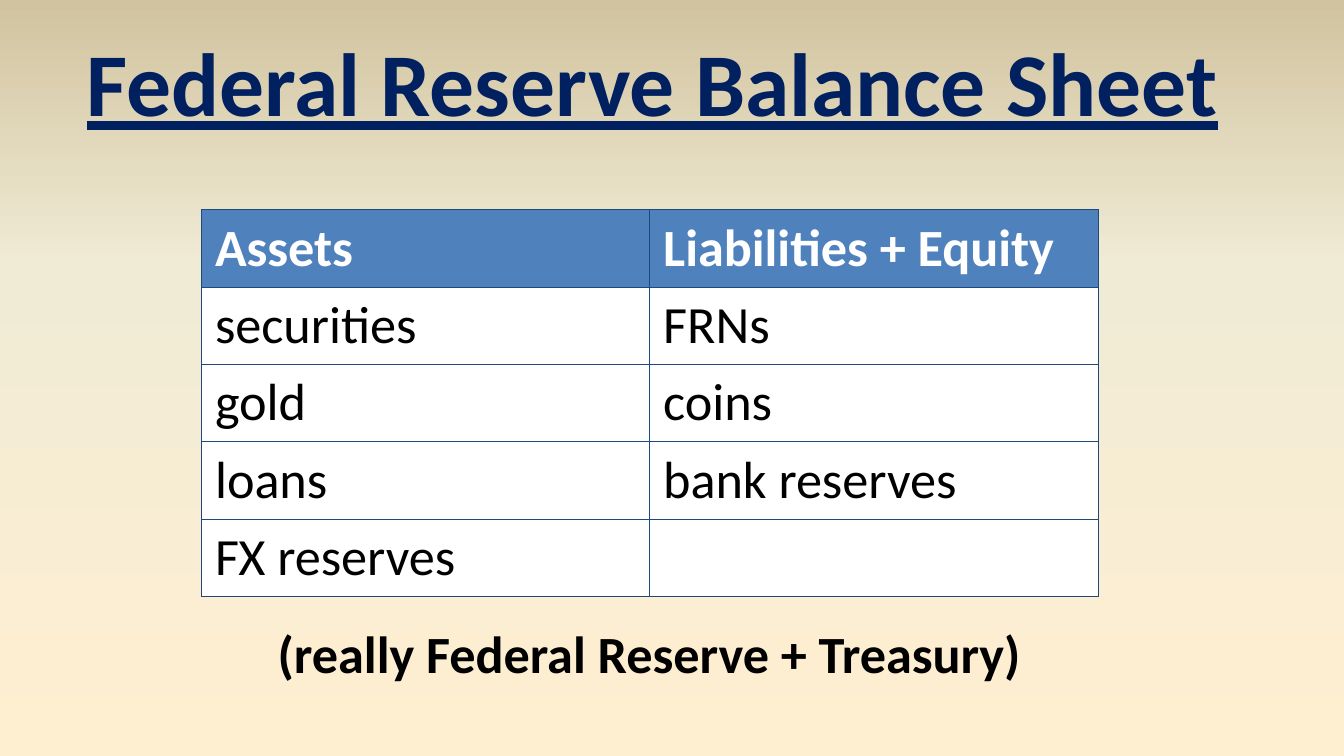
from pptx import Presentation
from pptx import util as u
from pptx.dml import color
from pptx.enum import text
from pptx.oxml import parse_xml
from pptx.oxml import ns

COLORS = {
    "navy": "002060", "black": "000000", "white": "FFFFFF",
    "header": "4F81BD", "border": "1F497D",
}
BACKGROUND_STOPS = [(0, "FFEFD1"), (65, "F0EBD5"), (100, "D1C39F")]
BALANCE_SHEET = [
    ("Assets", "Liabilities + Equity"),
    ("securities", "FRNs"),
    ("gold", "coins"),
    ("loans", "bank reserves"),
    ("FX reserves", ""),
]


def set_background(page):
    """Fill the page with a gradient that runs from bottom to top."""
    stops = "".join(
        f'<a:gs pos="{place * 1000}"><a:srgbClr val="{shade}"/></a:gs>'
        for place, shade in BACKGROUND_STOPS
    )
    page.element.cSld.insert(0, parse_xml(
        f'<p:bg {ns.nsdecls("p", "a")}><p:bgPr><a:gradFill rotWithShape="1">'
        f'<a:gsLst>{stops}</a:gsLst><a:lin ang="16200000" scaled="0"/>'
        "</a:gradFill><a:effectLst/></p:bgPr></p:bg>"
    ))


def write(frame, words, shade, **formats):
    """Put one formatted span into the first paragraph of a frame."""
    para = frame.paragraphs[0]
    span = para.add_run()
    span.text = words
    for name, value in {"name": "Calibri", "size": u.Pt(28), **formats}.items():
        setattr(span.font, name, value)
    span.font.color.rgb = color.RGBColor.from_string(COLORS[shade])
    return para


def add_text(page, place, words, shade, wrap=True, **formats):
    """Add a centred bold text box."""
    box = page.shapes.add_textbox(*map(u.Inches, place))
    box.text_frame.word_wrap = wrap
    box.text_frame.auto_size = text.MSO_AUTO_SIZE.SHAPE_TO_FIT_TEXT
    para = write(box.text_frame, words, shade, bold=True, **formats)
    para.alignment = text.PP_ALIGN.CENTER


def set_borders(cell):
    """Draw a thin line on each side of a cell."""
    properties = cell._tc.get_or_add_tcPr()
    for index, side in enumerate(("lnL", "lnR", "lnT", "lnB")):
        properties.insert(index, parse_xml(
            f'<a:{side} {ns.nsdecls("a")} w="{u.Pt(0.5)}"><a:solidFill>'
            f'<a:srgbClr val="{COLORS["border"]}"/></a:solidFill></a:{side}>'
        ))


def add_balance_sheet(page, left, top, width, row_height):
    """Add the two-column table with a coloured header row."""
    count = len(BALANCE_SHEET)
    place = map(u.Inches, (left, top, width, row_height * count))
    table = page.shapes.add_table(count, 2, *place).table
    for row, entries in enumerate(BALANCE_SHEET):
        header = row == 0
        for column, words in enumerate(entries):
            cell = table.cell(row, column)
            cell.fill.solid()
            fill = COLORS["header" if header else "white"]
            cell.fill.fore_color.rgb = color.RGBColor.from_string(fill)
            set_borders(cell)
            if words:
                shade = "white" if header else "black"
                write(cell.text_frame, words, shade, bold=header)


def main():
    """Build and save the balance sheet slide."""
    deck = Presentation()
    deck.slide_width = u.Inches(10)
    deck.slide_height = deck.slide_width * 9 // 16
    page = deck.slides.add_slide(deck.slide_layouts[6])
    set_background(page)
    add_balance_sheet(page, 1.5, 1.56, 6.67, 0.57)
    add_text(page, (0.5, 0.15, 8.71, 0.91), "Federal Reserve Balance Sheet",
             "navy", wrap=False, size=u.Pt(48), underline=True)
    add_text(page, (1.83, 4.57, 6, 0.57),
             "(really Federal Reserve + Treasury)", "black")
    deck.save("out.pptx")


if __name__ == "__main__":
    main()
